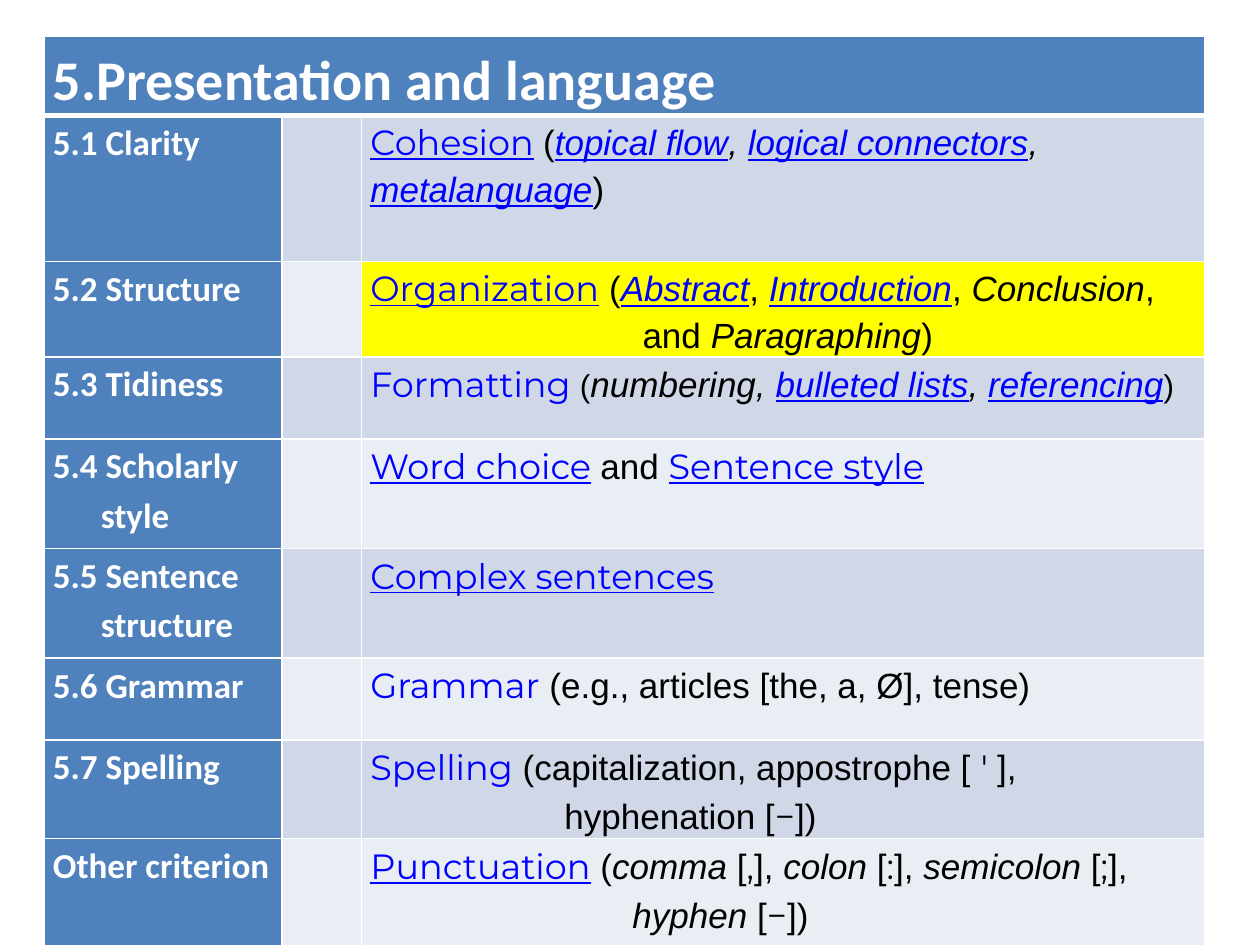
from lxml.etree import SubElement
from pptx import Presentation
from pptx.dml.color import RGBColor
from pptx.oxml.ns import qn
from pptx.util import Inches, Pt

WHITE = RGBColor(0xFF, 0xFF, 0xFF)
BLACK = RGBColor(0x00, 0x00, 0x00)
LINK_BLUE = RGBColor(0x00, 0x00, 0xFF)
HEADER_BLUE = RGBColor(0x4F, 0x81, 0xBD)
BANDS = RGBColor(0xD0, 0xD8, 0xE8), RGBColor(0xE9, 0xED, 0xF4)
YELLOW = RGBColor(0xFF, 0xFF, 0x00)

GRID_COLUMNS, GRID_ROWS = 1000, 750
COLUMN_WIDTHS = 189, 63, 669
TITLE_HEIGHT = 60
BREAK = "\n"

PLAIN = dict(name="Arial", size=Pt(20), color=BLACK, bold=False)
SMALL = PLAIN | dict(size=Pt(18))
ITALIC = PLAIN | dict(italic=True)
LINK = ITALIC | dict(color=LINK_BLUE, underline=True)
SYMBOL = PLAIN | dict(name="Montserrat")
TOPIC = SYMBOL | dict(color=LINK_BLUE)
TOPIC_LINK = TOPIC | dict(underline=True)
LABEL = dict(name="Calibri", size=Pt(20), color=WHITE, bold=True)
TITLE = LABEL | dict(size=Pt(32))

# Label lines, row height, hanging indent of the details, detail runs
CRITERIA = [
    ("5.1 Clarity", 116, 0, [
        ("Cohesion", TOPIC_LINK), (" ", TOPIC), ("(", PLAIN), ("topical flow", LINK),
        (", ", ITALIC), ("logical connectors", LINK), (", ", ITALIC),
        ("metalanguage", LINK), (")", PLAIN)]),
    ("5.2 Structure", 76, 216, [
        ("Organization", TOPIC_LINK), (" (", PLAIN), ("Abstract", LINK), (", ", PLAIN),
        ("Introduction", LINK), (", ", PLAIN), ("Conclusion", ITALIC),
        (", " + BREAK + "and ", PLAIN), ("Paragraphing", ITALIC), (")", PLAIN)]),
    ("5.3 Tidiness", 65, 0, [
        ("Formatting ", TOPIC), ("(", SMALL), ("numbering, ", ITALIC),
        ("bulleted lists", LINK), (", ", ITALIC), ("referencing", LINK), (")", SMALL)]),
    ("5.4 Scholarly" + BREAK + "style", 87, 0, [
        ("Word choice", TOPIC_LINK), (" ", TOPIC), ("and ", PLAIN),
        ("Sentence style", TOPIC_LINK)]),
    ("5.5 Sentence " + BREAK + "structure", 87, 0, [("Complex sentences", TOPIC_LINK)]),
    ("5.6 Grammar", 65, 0, [
        ("Grammar", TOPIC), (" (e.g., articles [the, a, Ø], tense)", PLAIN)]),
    ("5.7 Spelling", 76, 154, [
        ("Spelling", TOPIC), (" (capitalization, appostrophe [ ", PLAIN), ("' ", SYMBOL),
        ("], " + BREAK + "hyphenation [", PLAIN), ("−", SYMBOL), ("])", PLAIN)]),
    ("Other criterion", 87, 208, [
        ("Punctuation", TOPIC_LINK), (" (", PLAIN),
        ("comma", ITALIC), (" [", PLAIN), (",", SYMBOL), ("], ", PLAIN),
        ("colon", ITALIC), (" [", PLAIN), (":", SYMBOL), ("], ", PLAIN),
        ("semicolon", ITALIC), (" [", PLAIN), (";", SYMBOL), ("], " + BREAK, PLAIN),
        ("hyphen", ITALIC), (" [", PLAIN), ("−", SYMBOL), ("])", PLAIN)]),
]
LABEL_INDENT = 38


class SlideBuilder:
    def __init__(self, presentation):
        self.slide = presentation.slides.add_slide(presentation.slide_layouts[6])
        self.column = presentation.slide_width // GRID_COLUMNS
        self.row = presentation.slide_height // GRID_ROWS

    def table(self, left, top, widths, heights):
        frame = self.slide.shapes.add_table(
            len(heights), len(widths), left * self.column, top * self.row,
            sum(widths) * self.column, sum(heights) * self.row)
        table = frame.table
        table.first_row = table.horz_banding = False
        for column, width in zip(table.columns, widths):
            column.width = width * self.column
        for row, height in zip(table.rows, heights):
            row.height = height * self.row
        return table

    def cell(self, cell, fill, runs=(), hanging=0, bottom_border=1):
        cell.margin_left = cell.margin_right = Inches(0.07)
        cell.margin_top = cell.margin_bottom = 0
        self.borders(cell, dict(lnL=1, lnR=1, lnT=1, lnB=bottom_border))
        cell.fill.solid()
        cell.fill.fore_color.rgb = fill
        paragraph = cell.text_frame.paragraphs[0]
        paragraph.line_spacing = 1.15
        self.hang(paragraph, hanging)
        for text, style in runs:
            self.run(paragraph, text, style)
        return paragraph

    def borders(self, cell, widths):
        properties = cell._tc.get_or_add_tcPr()
        for side, width in widths.items():
            line = SubElement(properties, qn("a:" + side), w=str(Pt(width)))
            fill = SubElement(line, qn("a:solidFill"))
            SubElement(fill, qn("a:srgbClr"), val=str(WHITE))

    def hang(self, paragraph, columns):
        """Indent every line but the first by the given grid columns."""
        properties = paragraph._p.get_or_add_pPr()
        properties.set("marL", str(columns * self.column))
        properties.set("indent", str(-columns * self.column))

    def number(self, paragraph, start):
        SubElement(paragraph._p.get_or_add_pPr(), qn("a:buFont"), typeface="+mj-lt")
        SubElement(paragraph._p.get_or_add_pPr(), qn("a:buAutoNum"),
                   type="arabicPeriod", startAt=str(start))

    def run(self, paragraph, text, style):
        for index, line in enumerate(text.split(BREAK)):
            if index:
                paragraph.add_line_break()
            if not line:
                continue
            run = paragraph.add_run()
            run.text = line
            for attribute, value in style.items():
                if attribute == "color":
                    run.font.color.rgb = value
                else:
                    setattr(run.font, attribute, value)


def main():
    presentation = Presentation()
    presentation.slide_width, presentation.slide_height = Inches(10), Inches(7.5)
    builder = SlideBuilder(presentation)
    heights = [TITLE_HEIGHT] + [height for _, height, _, _ in CRITERIA]
    table = builder.table(35, 29, COLUMN_WIDTHS, heights)

    table.cell(0, 0).merge(table.cell(0, 2))
    title = builder.cell(table.cell(0, 0), HEADER_BLUE,
                         [("Presentation and language", TITLE)], 28, bottom_border=3)
    title.space_before = Pt(6)
    builder.number(title, 5)

    for index, (label, _, hanging, details) in enumerate(CRITERIA):
        band = BANDS[index % 2]
        label_cell, score_cell, detail_cell = table.rows[index + 1].cells
        builder.cell(label_cell, HEADER_BLUE, [(label, LABEL)], LABEL_INDENT)
        builder.cell(score_cell, band)
        highlighted = label == "5.2 Structure"
        builder.cell(detail_cell, YELLOW if highlighted else band, details, hanging)

    presentation.save("out.pptx")


if __name__ == "__main__":
    main()
